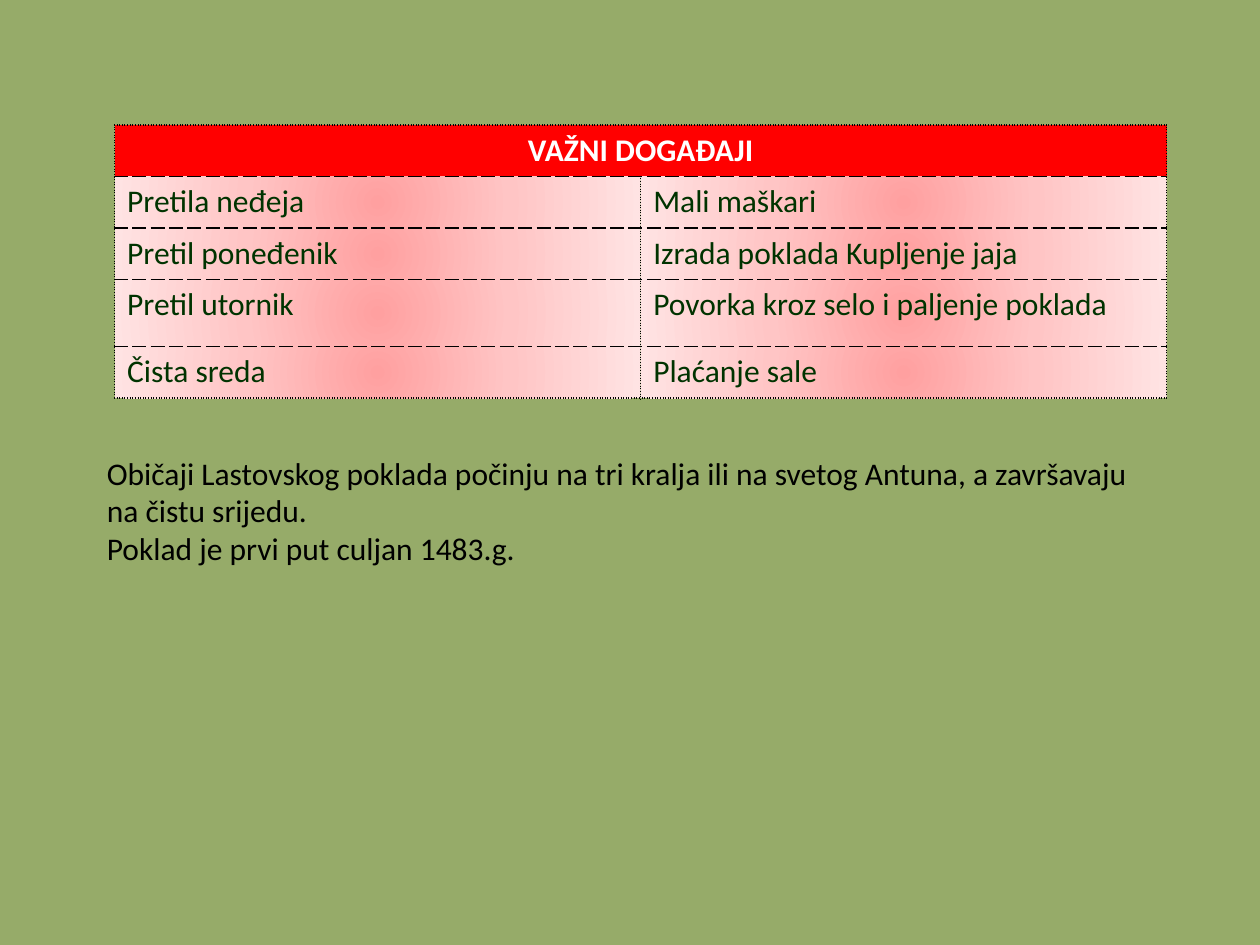
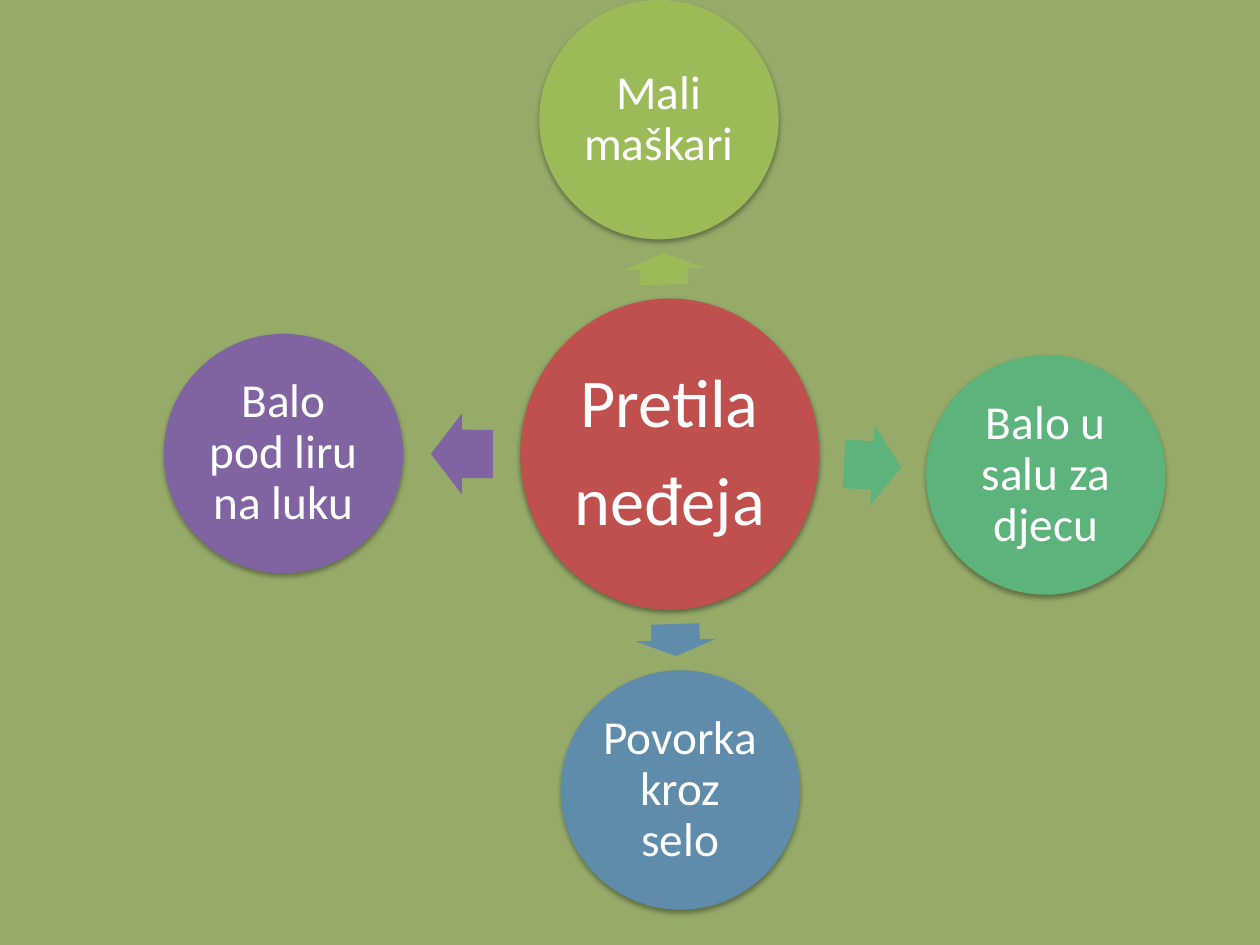
from math import atan2, cos, degrees, hypot, sin

from lxml.etree import SubElement
from pptx import Presentation
from pptx.dml.color import RGBColor
from pptx.enum.shapes import MSO_SHAPE
from pptx.enum.text import MSO_ANCHOR, PP_ALIGN
from pptx.oxml import parse_xml
from pptx.oxml.ns import nsdecls, qn
from pptx.util import Pt

PX = 9144
FONT = "Calibri"
GREEN = "96AB69"
BLACK = "000000"
WHITE = "FFFFFF"
GLOW = [(0, "FFA0A0"), (50, "FFC5C5"), (100, "FFE3E3")]
HEAD = "VAŽNI DOGAĐAJI"
EVENTS = [
    ("Pretila neđeja", "Mali maškari"),
    ("Pretil poneđenik", "Izrada poklada Kupljenje jaja"),
    ("Pretil utornik", "Povorka kroz selo i paljenje poklada"),
    ("Čista sreda", "Plaćanje sale"),
]
NOTES = [
    "Običaji Lastovskog poklada počinju na tri kralja ili na svetog Antuna, "
    "a završavaju na čistu srijedu.",
    "Poklad je prvi put culjan 1483.g.",
]
HUB = (283, 237, 237, 247)
NODE = 190
NODES = [
    ("Mali maškari", "9BBB59", 298, 0),
    ("Balo u salu za djecu", "5CB37C", 605, 282),
    ("Povorka kroz selo", "608CAB", 315, 532),
    ("Balo pod liru na luku", "8064A2", 0, 265),
]


def rgb(color):
    return RGBColor.from_string(color)


def emu(*sizes):
    return [round(size * PX) for size in sizes]


def write(frame, lines, size, color, align=None, bold=False):
    for i, line in enumerate(lines):
        para = frame.paragraphs[0] if i == 0 else frame.add_paragraph()
        para.text = line
        para.alignment = align
        font = para.font
        font.name, font.size, font.bold = FONT, Pt(size), bold
        font.color.rgb = rgb(color)


def add_page(deck):
    page = deck.slides.add_slide(deck.slide_layouts[6])
    fill = page.background.fill
    fill.solid()
    fill.fore_color.rgb = rgb(GREEN)
    return page


def edge(cell, side, dash):
    cell._tc.get_or_add_tcPr().append(parse_xml(
        f'<a:{side} {nsdecls("a")} w="12700"><a:solidFill><a:srgbClr val="{BLACK}"/>'
        f'</a:solidFill><a:prstDash val="{dash}"/></a:{side}>'))


def glow(cell):
    stops = "".join(f'<a:gs pos="{pos * 1000}"><a:srgbClr val="{color}"/></a:gs>'
                    for pos, color in GLOW)
    cell._tc.get_or_add_tcPr().append(parse_xml(
        f'<a:gradFill {nsdecls("a")} rotWithShape="1"><a:gsLst>{stops}</a:gsLst>'
        '<a:path path="circle"><a:fillToRect l="50000" t="50000" r="50000" b="50000"/>'
        '</a:path></a:gradFill>'))


def add_events(page, box):
    rows = [(HEAD, "")] + EVENTS
    grid = page.shapes.add_table(len(rows), 2, *emu(*box)).table
    grid.horz_banding = False
    for row, high in zip(grid.rows, (41, 41, 41, 53, 41)):
        row.height = high * PX
    for r, texts in enumerate(rows):
        for c, text in enumerate(texts):
            cell = grid.cell(r, c)
            edge(cell, "lnL", "sysDot")
            edge(cell, "lnR", "sysDot")
            edge(cell, "lnT", "dash" if r else "sysDot")
            edge(cell, "lnB", "dash" if r < len(rows) - 1 else "sysDot")
            if r:
                glow(cell)
                write(cell.text_frame, [text], 18, "003300")
            else:
                cell.fill.solid()
                cell.fill.fore_color.rgb = rgb("FF0000")
    grid.cell(0, 0).merge(grid.cell(0, 1))
    write(grid.cell(0, 0).text_frame, [HEAD], 18, WHITE, PP_ALIGN.CENTER, True)


def add_notes(page, box):
    frame = page.shapes.add_textbox(*emu(*box)).text_frame
    frame.word_wrap = True
    write(frame, NOTES, 18, BLACK)


def add_form(page, kind, box, color):
    form = page.shapes.add_shape(kind, *emu(*box))
    form.shadow.inherit = False
    form.fill.solid()
    form.fill.fore_color.rgb = rgb(color)
    form.line.fill.background()
    return form


def add_disc(page, box, color, lines, size, inset, drop, alpha):
    disc = add_form(page, MSO_SHAPE.OVAL, box, color)
    shade = SubElement(
        disc._element.spPr.find(qn("a:effectLst")), qn("a:outerShdw"),
        blurRad=str(Pt(3.1)), dist=str(Pt(drop)), dir="5400000", rotWithShape="0")
    tint = SubElement(shade, qn("a:srgbClr"), val=BLACK)
    SubElement(tint, qn("a:alpha"), val=str(alpha * 1000))
    frame = disc.text_frame
    frame.word_wrap = True
    frame.vertical_anchor = MSO_ANCHOR.MIDDLE
    frame.margin_left = frame.margin_right = inset * PX
    frame.margin_top = frame.margin_bottom = inset * PX
    write(frame, lines, size, WHITE, PP_ALIGN.CENTER)
    for para in frame.paragraphs:
        para.line_spacing = 0.9
        para.space_after = Pt(round(size * 0.35))


def add_arrow(page, hub, node, color):
    mid_x, mid_y = hub[0] + hub[2] / 2, hub[1] + hub[3] / 2
    run = node[0] + node[2] / 2 - mid_x
    rise = node[1] + node[3] / 2 - mid_y
    turn = atan2(rise, run)
    start = 1 / hypot(cos(turn) * 2 / hub[2], sin(turn) * 2 / hub[3])
    end = hypot(run, rise) - node[2] / 2
    reach, long, high = (start + end) / 2, (end - start) * 0.53, 64
    left = mid_x + reach * cos(turn) - long / 2
    top = mid_y + reach * sin(turn) - high / 2
    arrow = add_form(page, MSO_SHAPE.RIGHT_ARROW, (left, top, long, high), color)
    arrow.adjustments[0], arrow.adjustments[1] = 0.6, 0.5
    arrow.rotation = degrees(turn) % 360


def add_wheel(page, left, top):
    hub = (left + HUB[0], top + HUB[1], *HUB[2:])
    add_disc(page, hub, "C0504D", ["Pretila", "neđeja"], 39, 5, 1.6, 38)
    for text, color, x, y in NODES:
        node = (left + x, top + y, NODE, NODE)
        add_arrow(page, hub, node, color)
        add_disc(page, node, color, [text], 27, 4, 1.8, 35)


def main():
    deck = Presentation()
    deck.slide_width, deck.slide_height = emu(1000, 750)
    page = add_page(deck)
    add_events(page, (91, 99, 835, 217))
    add_notes(page, (75, 355, 843, 101))
    add_wheel(add_page(deck), 130, 0)
    deck.save("out.pptx")


if __name__ == "__main__":
    main()
